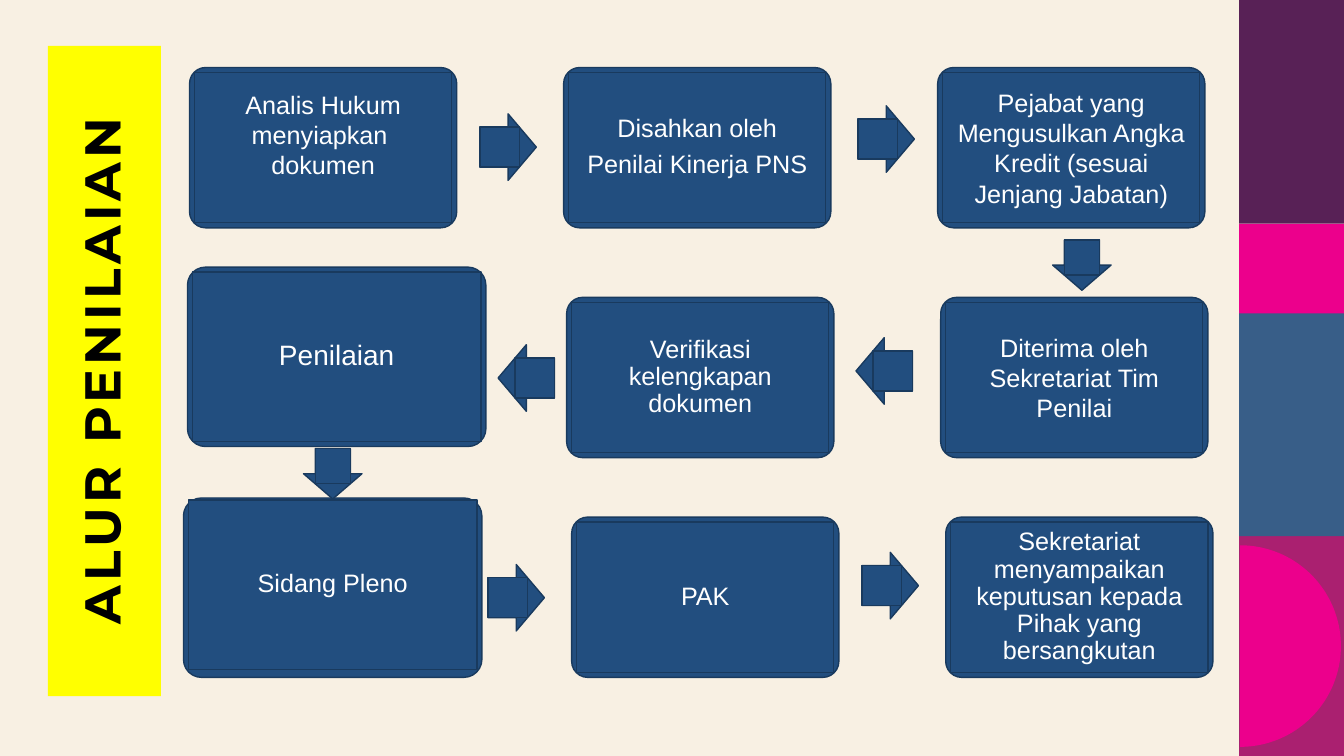
"""Build the ALUR PENILAIAN flow slide."""
import math
from dataclasses import dataclass

from pptx import Presentation
from pptx import util as u
from pptx.dml.color import RGBColor
from pptx.enum import shapes, text


@dataclass(frozen=True)
class Theme:
    """Hold the colours, fonts and type sizes of the slide."""
    ground: str = "F8F0E3"
    card: str = "224E7F"
    edge: str = "193A5E"
    card_text: str = "FFFFFF"
    banner: str = "FFFF00"
    banner_text: str = "000000"
    plum: str = "582156"
    pink: str = "EC008C"
    steel: str = "385E88"
    berry: str = "AA2070"
    body_font: str = "Arial"
    title_font: str = "Montserrat"
    body_size: int = 18
    large_size: int = 20
    title_size: int = 36


THEME = Theme()
SHAPE = shapes.MSO_SHAPE
SMALL, LARGE = (265, 159), (296, 178)
PITCH = 371
TIGHT = 0.9


def px(length):
    """Turn px, at 100 to the inch, into EMU."""
    return u.Emu(round(length * 9144))


def paint(shape, fill, edge=None):
    """Give a shape a flat fill and an optional outline."""
    shape.shadow.inherit = False
    shape.fill.solid()
    shape.fill.fore_color.rgb = RGBColor.from_string(fill)
    if edge:
        shape.line.color.rgb = RGBColor.from_string(edge)
        shape.line.width = u.Pt(1)
    else:
        shape.line.fill.background()


def add_block(parent, kind, x, y, width, height, fill, edge=None):
    """Add a painted preset shape to a page or a group."""
    block = parent.shapes.add_shape(kind, px(x), px(y), px(width), px(height))
    paint(block, fill, edge)
    return block


def set_frame(frame, margin):
    """Centre a text frame vertically with equal margins."""
    frame.word_wrap = True
    frame.auto_size = text.MSO_AUTO_SIZE.NONE
    frame.vertical_anchor = text.MSO_ANCHOR.MIDDLE
    frame.margin_left = frame.margin_right = px(margin)
    frame.margin_top = frame.margin_bottom = px(margin)


def add_span(para, wording, font, size, colour):
    """Add one centred, formatted run to a paragraph."""
    para.alignment = text.PP_ALIGN.CENTER
    span = para.add_run()
    span.text = wording
    span.font.name = font
    span.font.size = u.Pt(size)
    span.font.color.rgb = RGBColor.from_string(colour)
    return span


def add_card(page, x, y, lines, size=SMALL, type_size=THEME.body_size,
             spacing=TIGHT, lift=0, bottom=7):
    """Add a rounded card with a framed text panel."""
    width, height = size
    inset = round(width * 0.018)
    group = page.shapes.add_group_shape()
    rim = add_block(group, SHAPE.ROUNDED_RECTANGLE, x, y, width, height,
                    THEME.card, THEME.edge)
    rim.adjustments[0] = 0.1
    panel = add_block(group, SHAPE.RECTANGLE, x + inset, y + inset - lift,
                      width - 2 * inset, height - 2 * inset, THEME.card, THEME.edge)
    frame = panel.text_frame
    set_frame(frame, 7)
    frame.margin_bottom = px(bottom)
    for index, line in enumerate(lines):
        para = frame.add_paragraph() if index else frame.paragraphs[0]
        para.line_spacing = spacing
        para.space_after = u.Pt(type_size * 0.35 if spacing == TIGHT else 0)
        add_span(para, line, THEME.body_font, type_size, THEME.card_text)


def add_arrow(page, x, y, angle=0, width=56, height=66):
    """Add a block arrow with a square framed on its shaft."""
    group = page.shapes.add_group_shape()
    arrow = add_block(group, SHAPE.RIGHT_ARROW, x, y, width, height,
                      THEME.card, THEME.edge)
    arrow.adjustments[0], arrow.adjustments[1] = 0.6, 0.5
    arrow.rotation = angle
    length, thickness = width * 0.7, height * 0.6
    back, turn = width * 0.15, math.radians(angle)
    middle_x = x + width / 2 - back * math.cos(turn)
    middle_y = y + height / 2 - back * math.sin(turn)
    shaft = add_block(group, SHAPE.RECTANGLE, middle_x - length / 2,
                      middle_y - thickness / 2, length, thickness,
                      THEME.card, THEME.edge)
    shaft.rotation = angle


def add_half_disc(page, x, middle_y, radius):
    """Add a half disc that bulges to the right."""
    turns = [math.radians(angle) for angle in range(-90, 91, 2)]
    points = [(px(x + radius * math.cos(turn)), px(middle_y + radius * math.sin(turn)))
              for turn in turns]
    builder = page.shapes.build_freeform(*points[0])
    builder.add_line_segments(points[1:], close=True)
    paint(builder.convert_to_shape(), THEME.pink)


def add_sidebar(page):
    """Add the coloured strip along the right edge."""
    bands = [(528, 222, THEME.berry), (310, 222, THEME.steel),
             (0, 222, THEME.plum), (222, 89, THEME.pink)]
    for top, height, colour in bands:
        add_block(page, SHAPE.RECTANGLE, 1229, top, 104, height, colour)
    add_half_disc(page, 1230, 641, 100)


def set_title(page, wording):
    """Turn the title into an upright banner."""
    title = page.shapes.title
    title.left, title.top, title.width, title.height = map(px, (-219, 312, 645, 112))
    title.rotation = 270
    title.fill.solid()
    title.fill.fore_color.rgb = RGBColor.from_string(THEME.banner)
    set_frame(title.text_frame, 0)
    para = title.text_frame.paragraphs[0]
    para.line_spacing = TIGHT
    span = add_span(para, wording, THEME.title_font, THEME.title_size,
                    THEME.banner_text)
    span.font.bold = True
    span.font._element.set("spc", "300")


def main():
    """Build and save the deck."""
    deck = Presentation()
    deck.slide_width, deck.slide_height = px(1333), px(750)
    page = deck.slides.add_slide(deck.slide_layouts[5])
    page.background.fill.solid()
    page.background.fill.fore_color.rgb = RGBColor.from_string(THEME.ground)
    add_sidebar(page)
    set_title(page, "ALUR PENILAIAN")

    first, second, third = (188, 67), (191, 295), (196, 513)
    add_card(page, *first, ["Analis Hukum menyiapkan ", "dokumen"],
             spacing=1.0, bottom=33)
    add_card(page, first[0] + PITCH, first[1],
             ["Disahkan oleh", "Penilai Kinerja PNS"])
    add_card(page, first[0] + 2 * PITCH, first[1],
             ["Pejabat yang Mengusulkan Angka Kredit (sesuai Jenjang Jabatan)"],
             spacing=1.0)
    add_card(page, second[0] + 2 * PITCH, second[1],
             ["Diterima oleh Sekretariat Tim Penilai"], spacing=1.0)
    add_card(page, second[0] + PITCH, second[1], ["Verifikasi kelengkapan dokumen"])
    add_card(page, 186, 265, ["Penilaian"], LARGE, THEME.large_size)
    add_card(page, 182, 494, ["Sidang Pleno"], LARGE, lift=3)
    add_card(page, third[0] + PITCH, third[1], ["PAK"])
    add_card(page, third[0] + 2 * PITCH, third[1],
             ["Sekretariat menyampaikan keputusan kepada Pihak yang bersangkutan"])

    for x, y, angle in [(476, 113, 0), (851, 105, 0), (849, 335, 180),
                        (494, 342, 180), (484, 560, 0), (855, 548, 0)]:
        add_arrow(page, x, y, angle)
    for x, y in [(1048, 234), (305, 441)]:
        add_arrow(page, x, y, 90, 50, 58)
    deck.save("out.pptx")


if __name__ == "__main__":
    main()
